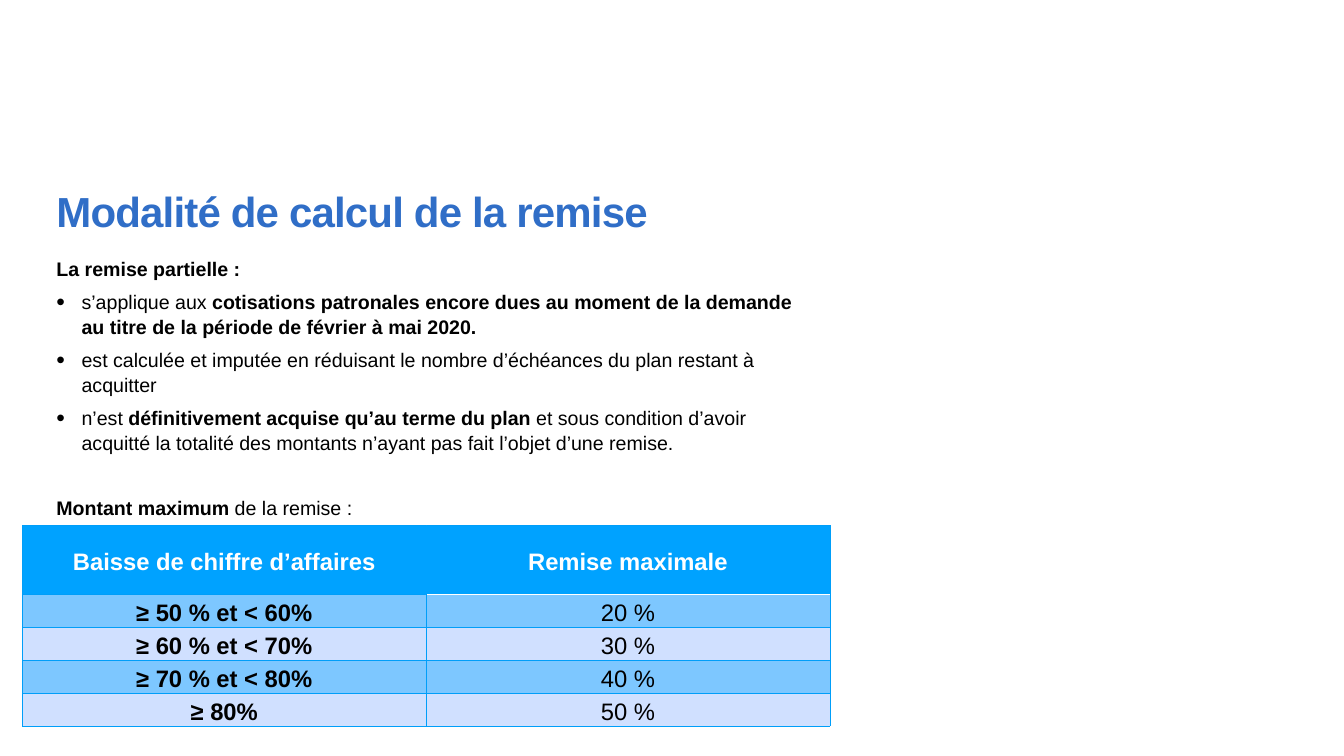
from lxml.etree import SubElement
from pptx import Presentation
from pptx.dml.color import RGBColor
from pptx.enum.text import MSO_ANCHOR as Anchor, PP_ALIGN as Align
from pptx.oxml.ns import qn
from pptx.util import Inches, Pt

FONT = "Arial"
COLORS = {
    "title": "306EC7",
    "text": "000000",
    "white": "FFFFFF",
    "header": "00A2FF",
    "border": "009EF9",
    "row_dark": "7DC7FF",
    "row_light": "D0E0FF",
}
POINTS = [
    [("s’applique aux ", False),
     ("cotisations patronales encore dues au moment de la demande "
      "au titre de la période de février à mai 2020.", True)],
    [("est calculée et imputée en réduisant le nombre d’échéances "
      "du plan restant à acquitter", False)],
    [("n’est ", False),
     ("définitivement acquise qu’au terme du plan ", True),
     ("et sous condition d’avoir acquitté la totalité des montants "
      "n’ayant pas fait l’objet d’une remise.", False)],
]
RATES = [
    ("Baisse de chiffre d’affaires", "Remise maximale"),
    ("≥ 50 % et < 60%", "20 %"),
    ("≥ 60 % et < 70%", "30 %"),
    ("≥ 70 % et < 80%", "40 %"),
    ("≥ 80%", "50 %"),
]


def add_span(para, text, size, color, bold):
    """Append one formatted run to a paragraph."""
    span = para.add_run()
    span.text = text
    span.font.name = FONT
    span.font.size = Pt(size)
    span.font.bold = bold
    span.font.color.rgb = RGBColor.from_string(COLORS[color])
    return span


def prepare_frame(frame, anchor):
    """Set wrapping, anchor and equal margins of a text frame."""
    frame.word_wrap = True
    frame.vertical_anchor = anchor
    frame.margin_left = frame.margin_right = Inches(0.06)
    frame.margin_top = frame.margin_bottom = Inches(0.06)


def add_bullet(para):
    """Give a paragraph a hanging round bullet."""
    props = para._p.get_or_add_pPr()
    props.set("marL", str(Inches(0.5)))
    props.set("indent", str(-Inches(0.5)))
    SubElement(props, qn("a:buSzPct"), val="125000")
    SubElement(props, qn("a:buFont"), typeface=FONT)
    SubElement(props, qn("a:buChar"), char="•")


def set_border(cell, side, color, width):
    """Draw one side (L, R, T or B) of a table cell."""
    line = SubElement(cell._tc.get_or_add_tcPr(), qn(f"a:ln{side}"), w=str(Pt(width)))
    fill = SubElement(line, qn("a:solidFill"))
    SubElement(fill, qn("a:srgbClr"), val=COLORS[color])


def place_title(page, left, top, width, height):
    """Move and format the title placeholder."""
    title = page.shapes.title
    title.left, title.top = Inches(left), Inches(top)
    title.width, title.height = Inches(width), Inches(height)
    prepare_frame(title.text_frame, Anchor.BOTTOM)
    para = title.text_frame.paragraphs[0]
    para.alignment = Align.LEFT
    span = add_span(para, "Modalité de calcul de la remise", 60, "title", True)
    span.font._element.set("spc", "-120")


def add_conditions(page, left, top, width, height):
    """Add the conditions of the partial remission."""
    box = page.shapes.add_textbox(Inches(left), Inches(top), Inches(width), Inches(height))
    frame = box.text_frame
    prepare_frame(frame, Anchor.TOP)
    rows = [
        ([("La remise partielle :", True)], False, 0),
        *[(spans, True, 12) for spans in POINTS],
        ([("Montant maximum ", True), ("de la remise :", False)], False, 58),
    ]
    for index, (spans, bulleted, before) in enumerate(rows):
        para = frame.add_paragraph() if index else frame.paragraphs[0]
        para.line_spacing = 1.05
        para.space_before = Pt(before)
        if bulleted:
            add_bullet(para)
        for text, bold in spans:
            add_span(para, text, 28, "text", bold)


def format_cell(cell, text, row, column):
    """Fill one cell of the rate table."""
    header = row == 0
    cell.vertical_anchor = Anchor.MIDDLE
    cell.margin_left = cell.margin_right = Inches(0.09)
    cell.margin_top = cell.margin_bottom = 0
    para = cell.text_frame.paragraphs[0]
    para.alignment = Align.CENTER
    para.line_spacing = 1.15
    add_span(para, text, 34, "white" if header else "text", header or column == 0)
    for side in "LRTB":
        white = column == 1 and (row, side) in [(0, "B"), (1, "T")]
        inner = header and (column, side) in [(0, "R"), (1, "L")]
        color = "white" if white else "header" if inner else "border"
        set_border(cell, side, color, 2 if white else 0.75)
    cell.fill.solid()
    fill = "header" if header else "row_dark" if row % 2 else "row_light"
    cell.fill.fore_color.rgb = RGBColor.from_string(COLORS[fill])


def add_rates(page, left, top, width, height):
    """Add the table of maximum remission rates."""
    table = page.shapes.add_table(
        len(RATES), 2, Inches(left), Inches(top), Inches(width), Inches(height)
    ).table
    table.columns[0].width = Inches(8)
    table.columns[1].width = Inches(width - 8)
    header_height = 1.37
    row_height = (height - header_height) / (len(RATES) - 1)
    for row, texts in enumerate(RATES):
        table.rows[row].height = Inches(row_height if row else header_height)
        for column, text in enumerate(texts):
            format_cell(table.cell(row, column), text, row, column)


def main():
    """Build and save the slide."""
    deck = Presentation()
    deck.slide_width, deck.slide_height = Inches(26.67), Inches(15)
    page = deck.slides.add_slide(deck.slide_layouts[5])
    place_title(page, 1.06, 3.18, 20.5, 1.57)
    add_conditions(page, 1.06, 5.02, 14.8, 9.38)
    add_rates(page, 0.45, 10.43, 16.02, 3.98)
    deck.save("out.pptx")


if __name__ == "__main__":
    main()
